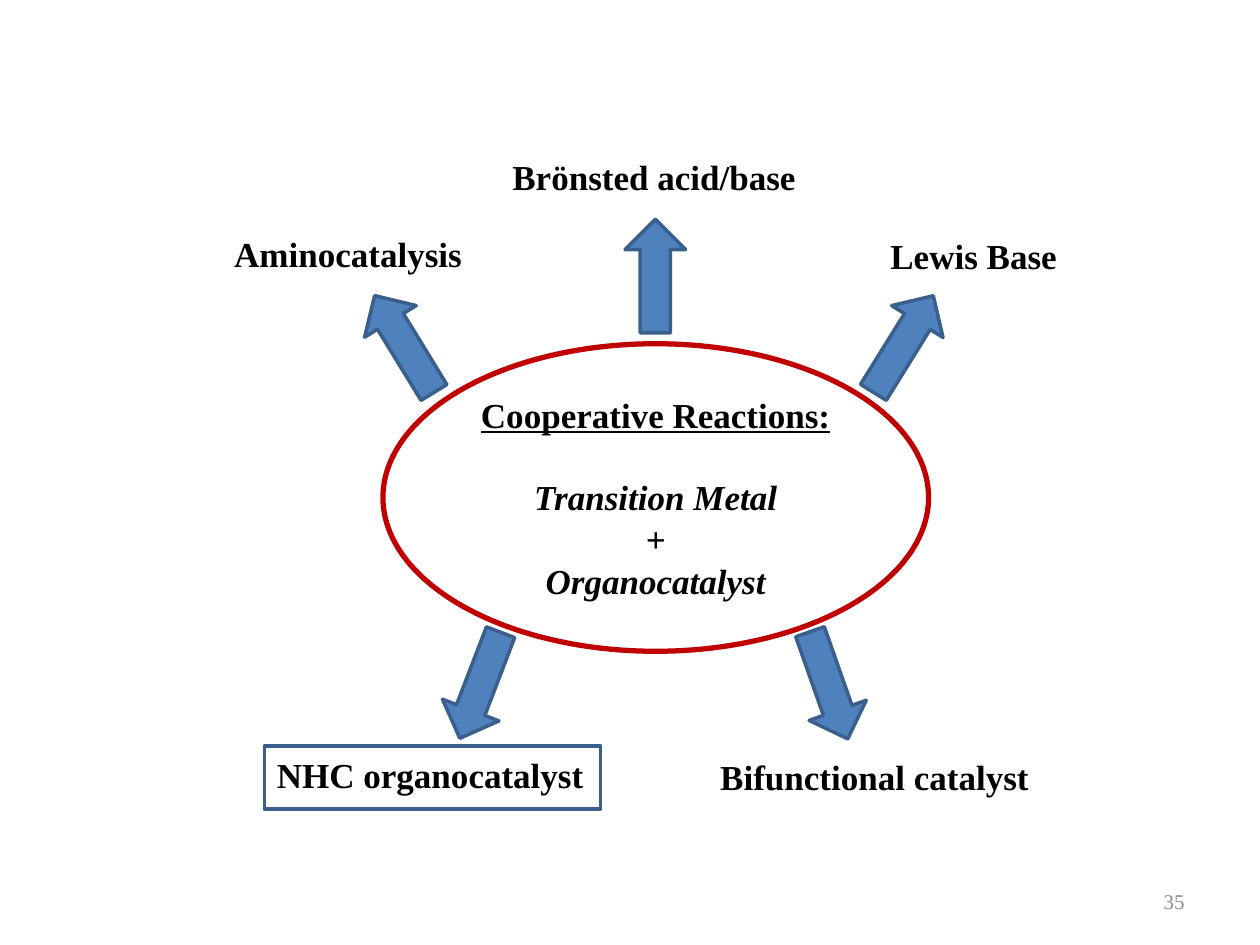
import pptx
import pptx.dml.color
import pptx.enum.shapes
import pptx.enum.text
import pptx.util

Cm = pptx.util.Cm
Pt = pptx.util.Pt
SHAPES = pptx.enum.shapes.MSO_SHAPE
ALIGN = pptx.enum.text.PP_ALIGN
ANCHOR = pptx.enum.text.MSO_ANCHOR

COLOURS = {
    "text": "000000",
    "page_number": "8C8C8C",
    "white": "FFFFFF",
    "ring": "C00000",
    "arrow": "4F81BD",
    "outline": "3A5F8C",
}
ARROW_SIZE = (1.22, 2.29)
LABEL_HEIGHT = 1.11

# text, left, top, width
LABELS = [
    ("Aminocatalysis", 4.47, 4.57, 5.13),
    ("Brönsted acid/base", 10.08, 3.02, 6.27),
    ("Lewis Base", 17.7, 4.6, 3.89),
    ("Bifunctional catalyst", 14.27, 15.11, 6.78),
    ("NHC organocatalyst", 5.33, 15.06, 6.73),
]
# left, top, rotation of a downward arrow
ARROWS = [
    (7.54, 5.79, 148.5),
    (12.6, 4.42, 180),
    (17.6, 5.79, 211.8),
    (16.1, 12.67, 340.6),
    (9.07, 12.67, 21),
]
# text, format
CENTRE_LINES = [
    ("Cooperative Reactions:", {"underline": True}),
    ("Transition Metal", {"italic": True, "space_before": 23}),
    ("+", {"italic": True}),
    ("Organocatalyst", {"italic": True}),
]


def rgb(name):
    return pptx.dml.color.RGBColor.from_string(COLOURS[name])


def write(paragraph, text, *, size=20, colour="text", bold=True, italic=False,
          underline=False, align=ALIGN.LEFT, space_before=0):
    paragraph.alignment = align
    paragraph.space_before = Pt(space_before)
    run = paragraph.add_run()
    run.text = text
    font = run.font
    font.name = "Times New Roman"
    font.size = Pt(size)
    font.bold, font.italic, font.underline = bold, italic, underline
    font.color.rgb = rgb(colour)


class DiagramSlide:
    """Holds the current slide and draws on it in one style, in centimetres."""

    def __init__(self, slide):
        self.slide = slide

    def shape(self, kind, left, top, width, height, fill=None,
              line="outline", line_width=2, rotation=0):
        shape = self.slide.shapes.add_shape(
            kind, Cm(left), Cm(top), Cm(width), Cm(height))
        shape.shadow.inherit = False
        shape.rotation = rotation
        if fill:
            shape.fill.solid()
            shape.fill.fore_color.rgb = rgb(fill)
        else:
            shape.fill.background()
        shape.line.color.rgb = rgb(line)
        shape.line.width = Pt(line_width)
        return shape

    def arrow(self, left, top, rotation):
        return self.shape(SHAPES.DOWN_ARROW, left, top, *ARROW_SIZE,
                          fill="arrow", rotation=rotation)

    def text(self, text, left, top, width, height=LABEL_HEIGHT, *,
             wrap=False, anchor=ANCHOR.TOP, **text_format):
        box = self.slide.shapes.add_textbox(
            Cm(left), Cm(top), Cm(width), Cm(height))
        frame = box.text_frame
        frame.word_wrap = wrap
        frame.vertical_anchor = anchor
        write(frame.paragraphs[0], text, **text_format)
        return box

    def centre(self, lines, left, top, width, height):
        ellipse = self.shape(SHAPES.OVAL, left, top, width, height,
                             fill="white", line="ring", line_width=3)
        frame = ellipse.text_frame
        frame.word_wrap = True
        frame.vertical_anchor = ANCHOR.MIDDLE
        for index, (text, text_format) in enumerate(lines):
            paragraph = frame.add_paragraph() if index else frame.paragraphs[0]
            write(paragraph, text, align=ALIGN.CENTER, **text_format)
        return ellipse


def main():
    presentation = pptx.Presentation()
    presentation.slide_width = Cm(25.4)
    presentation.slide_height = Cm(19.05)
    diagram = DiagramSlide(
        presentation.slides.add_slide(presentation.slide_layouts[6]))

    diagram.text("35", 18.21, 17.65, 5.92, 1.02, wrap=True,
                 anchor=ANCHOR.MIDDLE, size=12, colour="page_number",
                 bold=False, align=ALIGN.RIGHT)
    diagram.centre(CENTRE_LINES, 7.72, 6.93, 11, 6.2)
    for arrow in ARROWS:
        diagram.arrow(*arrow)
    for label in LABELS:
        diagram.text(*label)
    diagram.shape(SHAPES.RECTANGLE, 5.33, 15.04, 6.78, 1.27)

    presentation.save("out.pptx")


if __name__ == "__main__":
    main()
